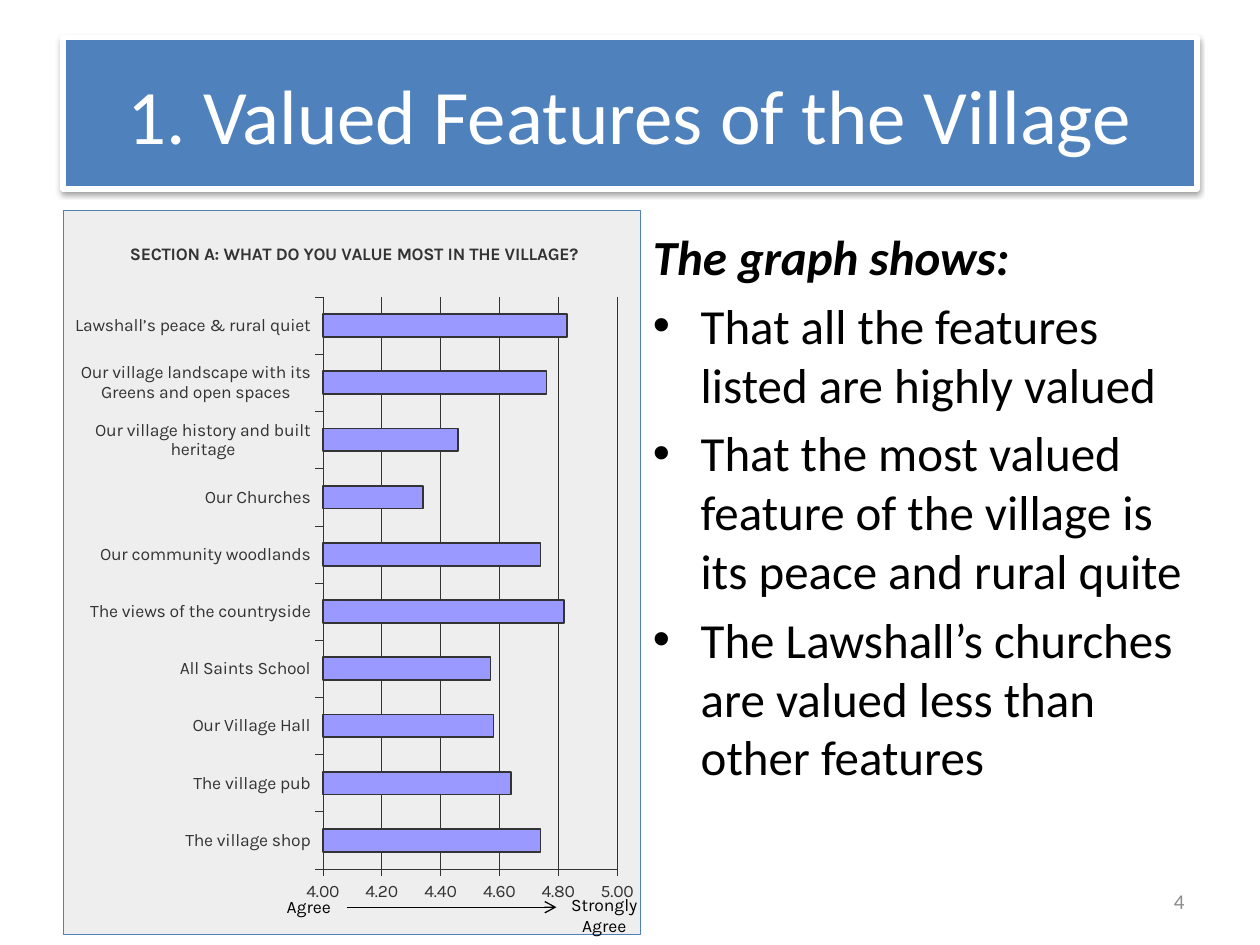
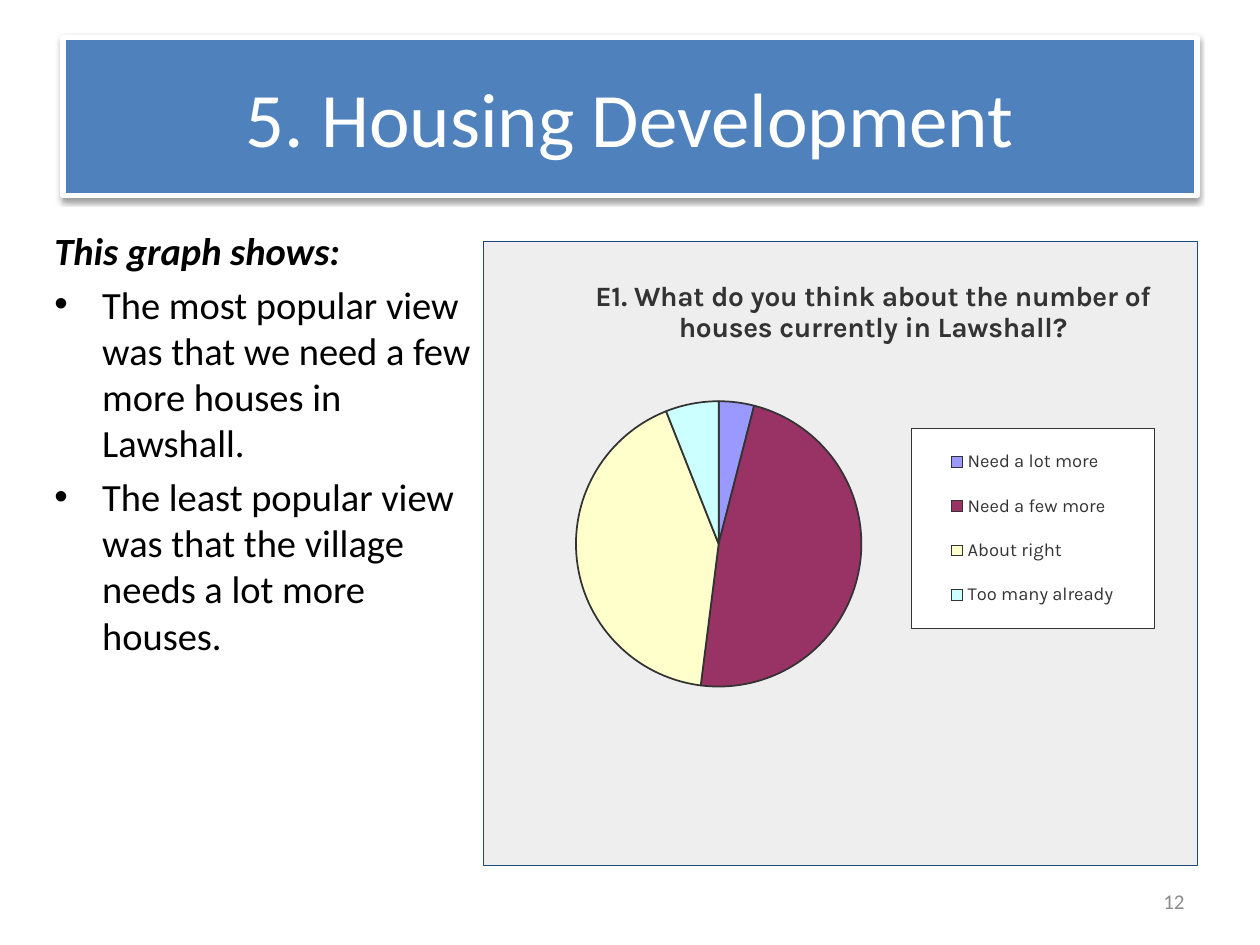
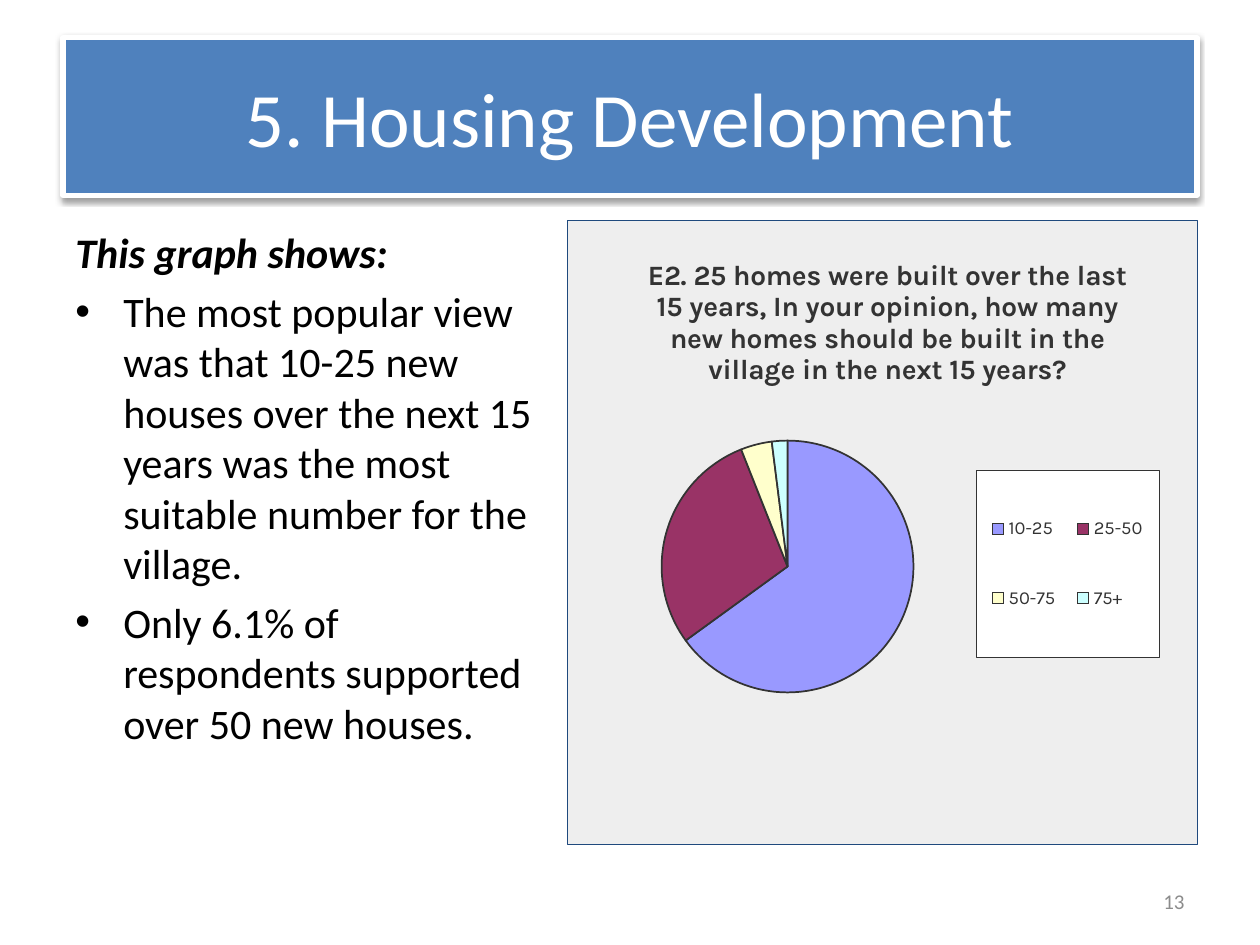
from pptx import Presentation, util as u
from pptx.chart.data import CategoryChartData
from pptx.dml.color import RGBColor
from pptx.enum import chart as charts, shapes, text
from pptx.oxml import parse_xml
from pptx.oxml.ns import nsdecls, qn

CELL = 1 / 12  # grid unit in inches: 120 columns by 90 rows
MARGIN, CONTENT_WIDTH = 6, 108
BODY_TOP, BODY_HEIGHT = 21, 59.4
BODY_FONT, CHART_FONT = "Calibri", "Karla"
COLORS = {
    "band": "4F81BD", "white": "FFFFFF", "black": "000000", "number": "8C8C8C",
    "ink": "333333", "panel": "EEEEEE", "navy": "1F497D", "bar": "9999FF",
}
SLICES = ["9999FF", "993366", "FFFFCC", "CCFFFF"]
VALUED_FEATURES = [
    ("The village shop", 4.74),
    ("The village pub", 4.64),
    ("Our Village Hall", 4.58),
    ("All Saints School", 4.57),
    ("The views of the countryside", 4.82),
    ("Our community woodlands", 4.74),
    ("Our Churches", 4.34),
    ("Our village history and built heritage", 4.46),
    ("Our village landscape with its Greens and open spaces", 4.76),
    ("Lawshall’s peace & rural quiet", 4.83),
]


def color(name):
    return RGBColor.from_string(COLORS.get(name, name))


def grid(*cells):
    return [u.Inches(cell * CELL) for cell in cells]


def set_font(font, size, name=BODY_FONT, fill="black", bold=False, italic=False):
    font.size, font.name, font.bold, font.italic = u.Pt(size), name, bold, italic
    font.color.rgb = color(fill)


def write(frame, content, align=text.PP_ALIGN.LEFT, space=0, bullet=False, **font):
    """Add one paragraph, using the empty first one if it is free."""
    first = frame.paragraphs[0]
    paragraph = frame.add_paragraph() if first.runs else first
    paragraph.alignment = align
    paragraph.space_before = u.Pt(space)
    run = paragraph.add_run()
    run.text = content
    set_font(run.font, **font)
    if bullet:
        properties = paragraph._p.get_or_add_pPr()
        indent = u.Inches(0.38)
        properties.set("marL", str(indent))
        properties.set("indent", str(-indent))
        properties.append(parse_xml(f'<a:buFont {nsdecls("a")} typeface="Arial"/>'))
        properties.append(parse_xml(f'<a:buChar {nsdecls("a")} char="•"/>'))


def add_text_box(slide, box, wrap=True, anchor=text.MSO_ANCHOR.TOP):
    frame = slide.shapes.add_textbox(*grid(*box)).text_frame
    frame.word_wrap, frame.vertical_anchor = wrap, anchor
    return frame


# Shared slide parts
def add_title_band(slide, title, height):
    band = slide.shapes.add_shape(shapes.MSO_SHAPE.RECTANGLE,
                                  *grid(MARGIN, 3.6, CONTENT_WIDTH, height))
    band.fill.solid()
    band.fill.fore_color.rgb = color("band")
    band.line.color.rgb = color("white")
    band.line.width = u.Pt(3)
    band.shadow.inherit = False
    band._element.spPr.find(qn("a:effectLst")).append(parse_xml(
        f'<a:outerShdw {nsdecls("a")} blurRad="{u.Pt(3.1)}" dist="{u.Pt(1.6)}" '
        'dir="5400000" rotWithShape="0"><a:srgbClr val="000000">'
        '<a:alpha val="38000"/></a:srgbClr></a:outerShdw>'))
    band.text_frame.word_wrap = True
    band.text_frame.vertical_anchor = text.MSO_ANCHOR.MIDDLE
    write(band.text_frame, title, align=text.PP_ALIGN.CENTER, size=44, fill="white")


def add_findings(slide, left, width, size, heading, findings):
    frame = add_text_box(slide, (left, BODY_TOP, width, BODY_HEIGHT))
    space = 0.2 * size
    write(frame, heading, space=space, size=size, bold=True, italic=True)
    for finding in findings:
        write(frame, finding, space=space, bullet=True, size=size)


def add_page_number(slide, number):
    frame = add_text_box(slide, (86, 83.4, 28, 4.8), anchor=text.MSO_ANCHOR.MIDDLE)
    write(frame, str(number), align=text.PP_ALIGN.RIGHT, size=12, fill="number")


def add_slide(presentation, title, number, band_height=15):
    slide = presentation.slides.add_slide(presentation.slide_layouts[6])
    add_title_band(slide, title, band_height)
    add_page_number(slide, number)
    return slide


# Chart formatting
def place(element, index, x, y, width=None, height=None, inner=False):
    """Position a chart part by shares of the chart's size."""
    for old in element.findall(qn("c:layout")):
        element.remove(old)
    target = '<c:layoutTarget val="inner"/>' if inner else ""
    values = {"x": x, "y": y, "w": width, "h": height}
    sizes = "".join(f'<c:{key} val="{value}"/>'
                    for key, value in values.items() if value is not None)
    element.insert(index, parse_xml(
        f'<c:layout {nsdecls("c")}><c:manualLayout>{target}<c:xMode val="edge"/>'
        f'<c:yMode val="edge"/>{sizes}</c:manualLayout></c:layout>'))


def area_format(fill, border=None):
    line = (f'<a:solidFill><a:srgbClr val="{COLORS[border]}"/></a:solidFill>'
            if border else "<a:noFill/>")
    return parse_xml(
        f'<c:spPr {nsdecls("c", "a")}><a:solidFill><a:srgbClr val="{COLORS[fill]}"/>'
        f'</a:solidFill><a:ln w="{u.Pt(0.25)}">{line}</a:ln></c:spPr>')


def outline(line, width):
    line.color.rgb = color("ink")
    line.width = u.Pt(width)


def add_survey_chart(slide, kind, box, question, question_size, question_at,
                     plot_at, answers, border):
    data = CategoryChartData(number_format="General")
    data.categories = [label for label, value in answers]
    data.add_series("Series 1", [value for label, value in answers])
    chart = slide.shapes.add_chart(kind, *grid(*box), data).chart
    set_font(chart.font, 10, CHART_FONT, "ink")
    chart.has_legend = False
    chart.has_title = True
    write(chart.chart_title.text_frame, question, align=text.PP_ALIGN.CENTER,
          size=question_size, name=CHART_FONT, fill="ink", bold=True)
    place(chart.chart_title._element, 1, *question_at)
    plot_area = chart._chartSpace.chart.plotArea
    place(plot_area, 0, *plot_at, inner=True)
    plot_area.append(area_format("panel"))
    chart._chartSpace.chart.addnext(area_format("panel", border))
    outline(chart.plots[0].series[0].format.line, 1)
    return chart


def add_bar_chart(slide, **options):
    chart = add_survey_chart(slide, charts.XL_CHART_TYPE.BAR_CLUSTERED, **options)
    plot = chart.plots[0]
    plot.gap_width, plot.vary_by_categories = 150, False
    plot.series[0].format.fill.solid()
    plot.series[0].format.fill.fore_color.rgb = color("bar")
    for axis in (chart.category_axis, chart.value_axis):
        axis.major_tick_mark = charts.XL_TICK_MARK.OUTSIDE
        axis.minor_tick_mark = charts.XL_TICK_MARK.NONE
        outline(axis.format.line, 0.25)
        set_font(axis.tick_labels.font, 10, CHART_FONT, "ink")
    values = chart.value_axis
    values.minimum_scale, values.maximum_scale, values.major_unit = 4, 5, 0.2
    values.tick_labels.number_format = "0.00"
    values.tick_labels.number_format_is_linked = False
    values.has_major_gridlines = True
    outline(values.major_gridlines.format.line, 0.25)


def add_pie_chart(slide, legend_at, **options):
    chart = add_survey_chart(slide, charts.XL_CHART_TYPE.PIE, question_size=16,
                             border="navy", **options)
    plot = chart.plots[0]
    plot.vary_by_categories = True
    for index, slice_color in enumerate(SLICES):
        point = plot.series[0].points[index].format
        point.fill.solid()
        point.fill.fore_color.rgb = color(slice_color)
        outline(point.line, 1)
    chart.has_legend = True
    legend = chart.legend
    legend.position = charts.XL_LEGEND_POSITION.RIGHT
    legend.include_in_layout = False
    set_font(legend.font, 10.5, CHART_FONT, "ink")
    place(legend._element, 1, *legend_at)
    legend._element.find(qn("c:txPr")).addprevious(area_format("white", "ink"))


def add_agreement_scale(slide):
    for box, lines in (((53, 84.6, 9.1, 5.3), ["Strongly", "Agree"]),
                       ((26, 84.7, 6.8, 3.2), ["Agree"])):
        frame = add_text_box(slide, box, wrap=False)
        for line in lines:
            write(frame, line, align=text.PP_ALIGN.CENTER, size=10, name=CHART_FONT)
    arrow = slide.shapes.add_connector(shapes.MSO_CONNECTOR.STRAIGHT,
                                       *grid(33, 86.4, 53, 86.4))
    arrow.line.color.rgb = color("black")
    arrow.line.width = u.Pt(0.75)
    arrow.line._get_or_add_ln().append(
        parse_xml(f'<a:tailEnd {nsdecls("a")} type="arrow"/>'))
    arrow._element.spPr.append(parse_xml(f'<a:effectLst {nsdecls("a")}/>'))


# Slides
def build_valued_features(presentation):
    slide = add_slide(presentation, "1. Valued Features of the Village", 4,
                      band_height=14.4)
    add_findings(slide, 61, 53, 28, "The graph shows:", [
        "That all the features listed are highly valued",
        "That the most valued feature of the village is its peace and rural quite",
        "The Lawshall’s churches are valued less than other features"])
    add_bar_chart(slide, box=(MARGIN, 20, 55, 69),
                  question="SECTION A: WHAT DO YOU VALUE MOST IN THE VILLAGE?",
                  question_size=10, question_at=(0.11, 0.04),
                  plot_at=(0.45, 0.12, 0.51, 0.79),
                  answers=VALUED_FEATURES, border="band")
    add_agreement_scale(slide)


def build_current_housing(presentation):
    slide = add_slide(presentation, "5. Housing Development", 12)
    add_findings(slide, 4, 42, 22, "This graph shows:", [
        "The most popular view was that we need a few more houses in Lawshall.",
        "The least popular view was that the village needs a lot more houses."])
    add_pie_chart(slide, box=(46, 23, 68, BODY_HEIGHT),
                  question="E1. What do you think about the number of houses "
                           "currently in Lawshall?",
                  question_at=(0.15, 0.05), plot_at=(0.13, 0.15, 0.4, 0.67),
                  legend_at=(0.6, 0.3, 0.34, 0.32),
                  answers=[("Need a lot more", 4), ("Need a few more", 48),
                           ("About right", 42), ("Too many already", 6)])


def build_future_housing(presentation):
    slide = add_slide(presentation, "5. Housing Development", 13)
    add_findings(slide, MARGIN, 46, 24, "This graph shows:", [
        "The most popular view was that 10-25 new houses over the next 15 years "
        "was the most suitable number for the village.",
        "Only 6.1% of respondents supported over 50 new houses."])
    add_pie_chart(slide, box=(54, BODY_TOP, 60, BODY_HEIGHT),
                  question="E2. 25 homes were built over the last 15 years, In your "
                           "opinion, how many new homes should be built in the "
                           "village in the next 15 years?",
                  question_at=(0.12, 0.05), plot_at=(0.15, 0.22, 0.4, 0.67),
                  legend_at=(0.65, 0.4, 0.29, 0.3),
                  answers=[("10-25", 65), ("25-50", 29), ("50-75", 4), ("75+", 2)])


def main():
    presentation = Presentation()
    presentation.slide_width, presentation.slide_height = grid(120, 90)
    build_valued_features(presentation)
    build_current_housing(presentation)
    build_future_housing(presentation)
    presentation.save("out.pptx")


if __name__ == "__main__":
    main()
